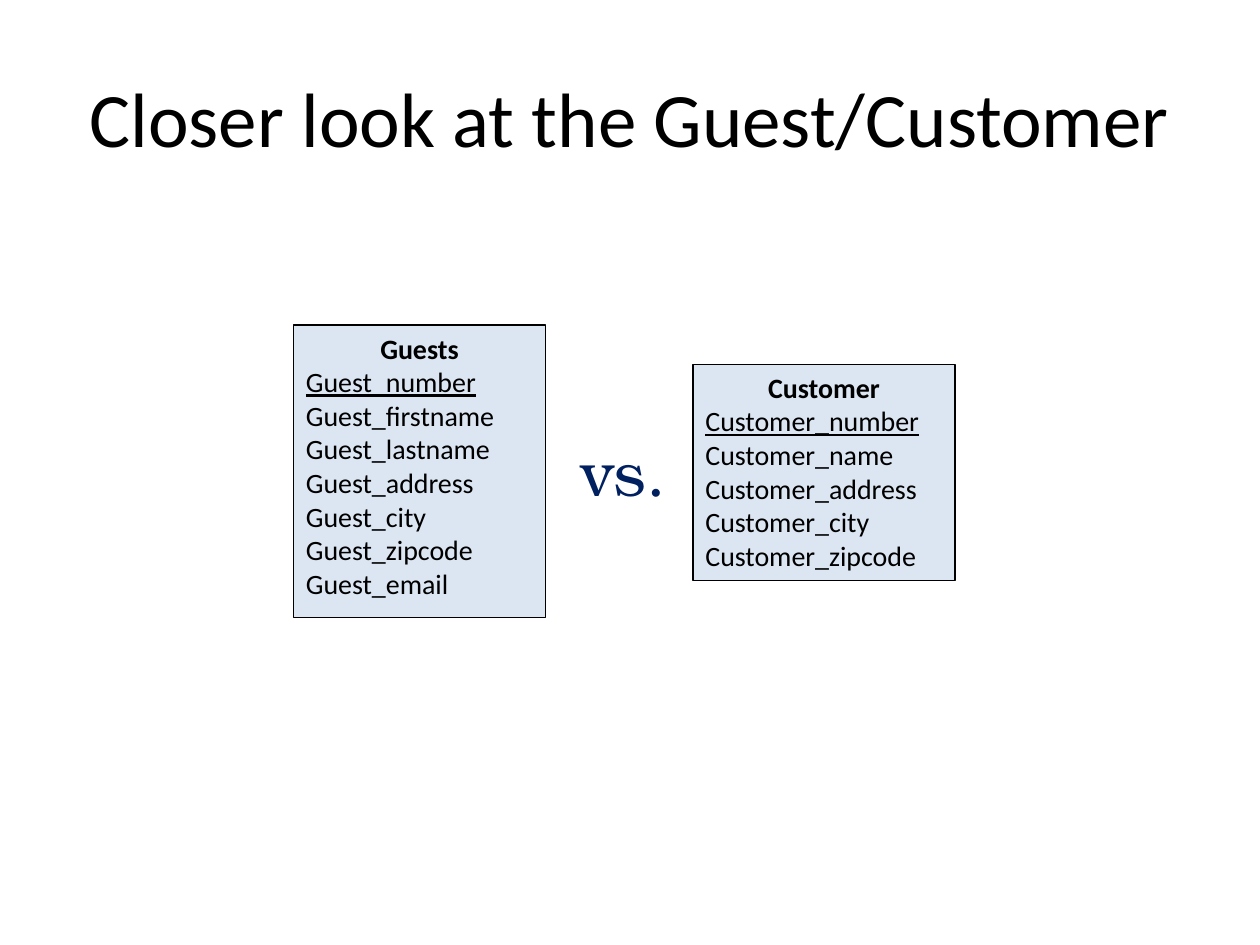
from dataclasses import dataclass

from pptx import Presentation
from pptx.dml.color import RGBColor
from pptx.enum.shapes import MSO_SHAPE as Shape
from pptx.enum.text import MSO_ANCHOR as Anchor, MSO_AUTO_SIZE as AutoSize, PP_ALIGN as Align
from pptx.slide import Slide
from pptx.util import Inches, Pt


@dataclass(frozen=True)
class Theme:
    font: str = "Calibri"
    accent_font: str = "TeX Gyre Bonum"
    ink: RGBColor = RGBColor(0x00, 0x00, 0x00)
    navy: RGBColor = RGBColor(0x00, 0x20, 0x60)
    entity_fill: RGBColor = RGBColor(0xDC, 0xE6, 0xF2)
    title_size: Pt = Pt(44)
    versus_size: Pt = Pt(36)
    entity_size: Pt = Pt(16)
    line_width: Pt = Pt(0.75)


@dataclass(frozen=True)
class Entity:
    name: str
    key: str
    attributes: tuple[str, ...]
    left: float
    top: float
    width: float
    height: float


THEME = Theme()

ENTITIES = (
    Entity("Guests", "number",
           ("firstname", "lastname", "address", "city", "zipcode", "email"),
           2.33, 2.58, 2, 2.32),
    Entity("Customer", "number", ("name", "address", "city", "zipcode"),
           5.5, 2.89, 2.08, 1.72),
)


def add_text(p, text: str, size: Pt, color: RGBColor = THEME.ink, align=Align.LEFT, **formats) -> None:
    p.alignment = align
    r = p.add_run()
    r.text = text
    r.font.color.rgb = color
    for name, value in {"name": THEME.font, "size": size, **formats}.items():
        setattr(r.font, name, value)


def add_title(s: Slide, text: str) -> None:
    sp = s.shapes.title
    box = {"left": 0.5, "top": 0.3, "width": 9, "height": 1.25}
    for name, value in box.items():
        setattr(sp, name, Inches(value))
    tf = sp.text_frame
    tf.vertical_anchor = Anchor.MIDDLE
    add_text(tf.paragraphs[0], text, THEME.title_size, align=Align.CENTER)


def add_entity(s: Slide, entity: Entity) -> None:
    box = (entity.left, entity.top, entity.width, entity.height)
    sp = s.shapes.add_shape(Shape.RECTANGLE, *map(Inches, box))
    sp.shadow.inherit = False
    sp.fill.solid()
    sp.fill.fore_color.rgb = THEME.entity_fill
    sp.line.color.rgb = THEME.ink
    sp.line.width = THEME.line_width
    tf = sp.text_frame
    settings = {"word_wrap": True, "vertical_anchor": Anchor.TOP,
                "auto_size": AutoSize.SHAPE_TO_FIT_TEXT}
    for name, value in settings.items():
        setattr(tf, name, value)
    add_text(tf.paragraphs[0], entity.name, THEME.entity_size, align=Align.CENTER, bold=True)
    prefix = entity.name.removesuffix("s")
    for attribute in (entity.key, *entity.attributes):
        add_text(tf.add_paragraph(), f"{prefix}_{attribute}", THEME.entity_size,
                 underline=attribute == entity.key)


def add_versus(s: Slide) -> None:
    sp = s.shapes.add_textbox(*map(Inches, (4.52, 3.39, 0.9, 0.71)))
    tf = sp.text_frame
    tf.word_wrap = False
    tf.auto_size = AutoSize.SHAPE_TO_FIT_TEXT
    add_text(tf.paragraphs[0], "vs.", THEME.versus_size, THEME.navy, name=THEME.accent_font)


def main() -> None:
    prs = Presentation()
    prs.slide_width, prs.slide_height = Inches(10), Inches(7.5)
    s = prs.slides.add_slide(prs.slide_layouts[5])
    add_title(s, "Closer look at the Guest/Customer")
    for entity in ENTITIES:
        add_entity(s, entity)
    add_versus(s)
    prs.save("out.pptx")


if __name__ == "__main__":
    main()
